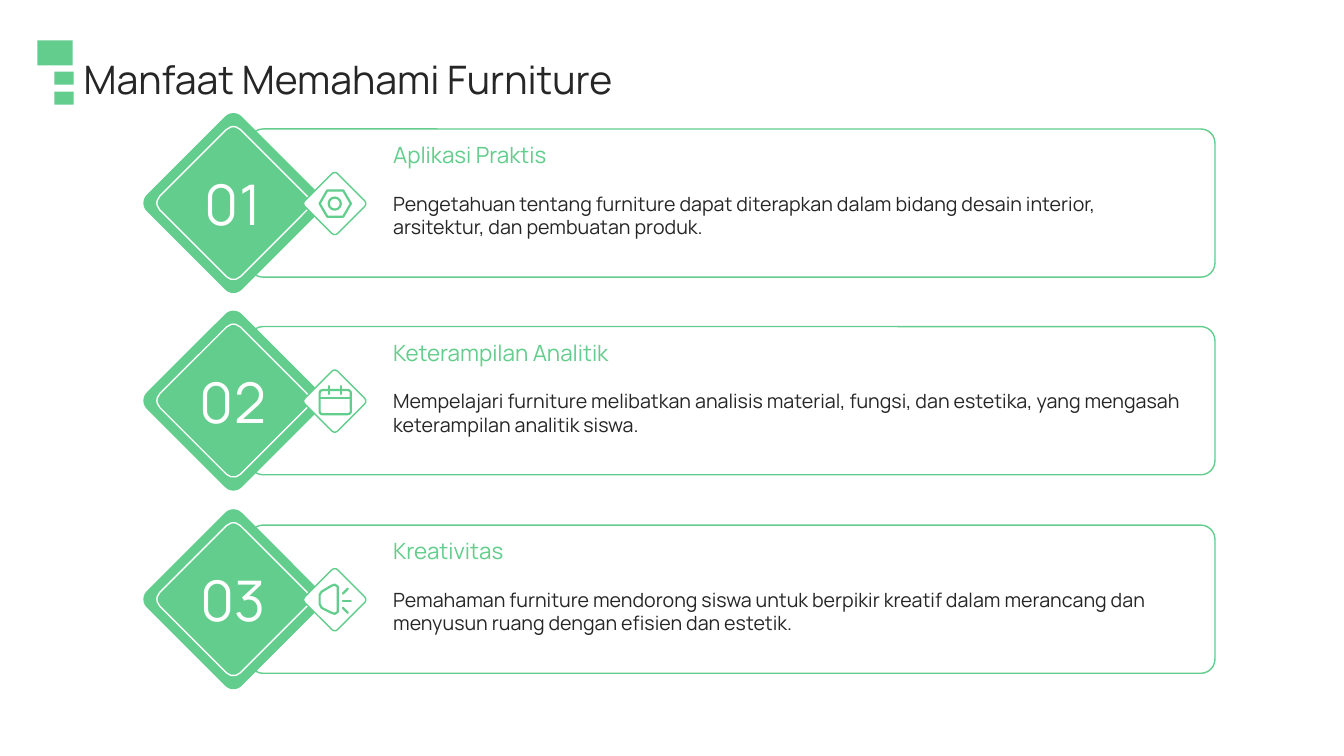
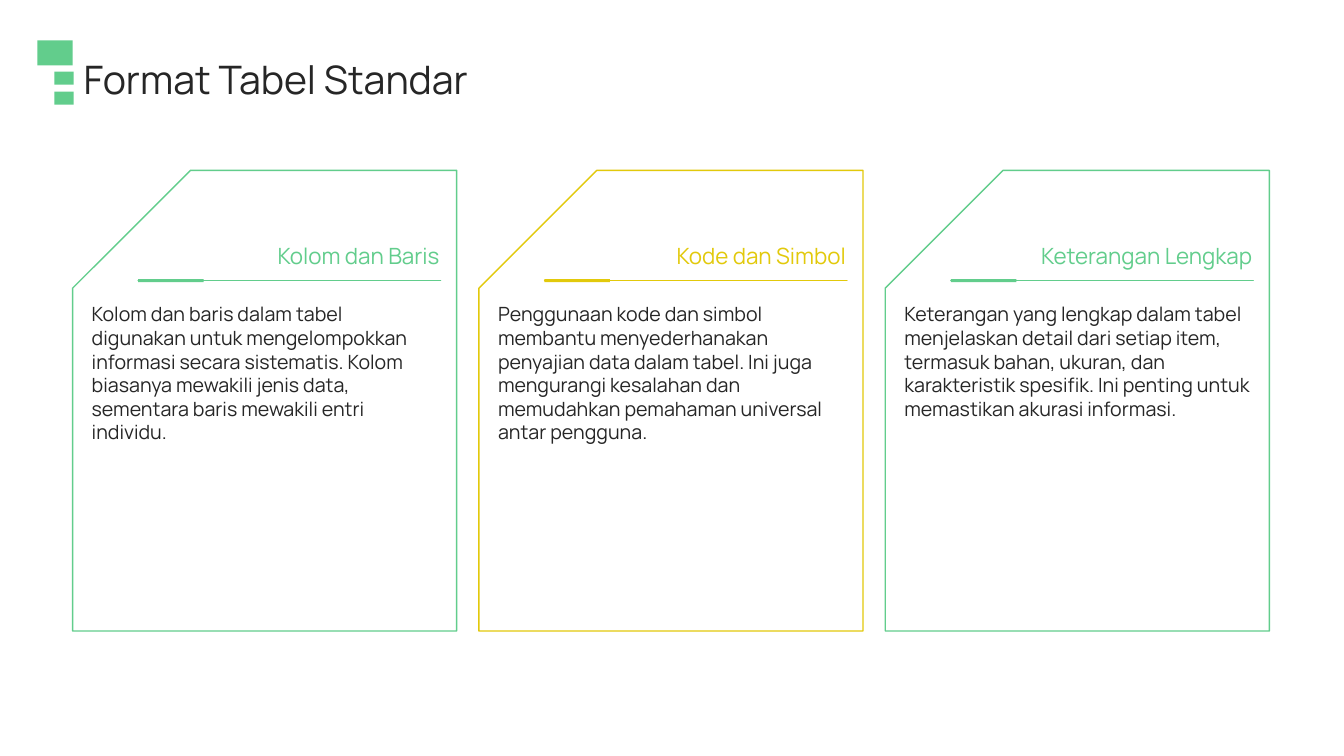
from lxml import etree
from pptx import Presentation
from pptx.dml.color import RGBColor
from pptx.enum.shapes import MSO_CONNECTOR, MSO_SHAPE
from pptx.enum.text import MSO_ANCHOR, PP_ALIGN
from pptx.oxml.ns import qn
from pptx.util import Pt

PX = 9144  # 100 px to the inch
FONT = "Manrope"
GREEN, YELLOW, INK, WHITE = "62CD8C", "E2C90B", "262626", "FFFFFF"
RECT, ROUND, OVAL = MSO_SHAPE.RECTANGLE, MSO_SHAPE.ROUNDED_RECTANGLE, MSO_SHAPE.OVAL
HEXAGON, SNIPPED = MSO_SHAPE.HEXAGON, MSO_SHAPE.SNIP_1_RECTANGLE
STRAIGHT = MSO_CONNECTOR.STRAIGHT
LEFT, CENTER, RIGHT = PP_ALIGN.LEFT, PP_ALIGN.CENTER, PP_ALIGN.RIGHT
TOP, MIDDLE, BOTTOM = MSO_ANCHOR.TOP, MSO_ANCHOR.MIDDLE, MSO_ANCHOR.BOTTOM
ICON_STROKE = 1.6


def color(value):
    return RGBColor.from_string(value)


def paint(shape, fill=None, line=None, width=1):
    shape.shadow.inherit = False
    if fill:
        shape.fill.solid()
        shape.fill.fore_color.rgb = color(fill)
    else:
        shape.fill.background()
    if line:
        shape.line.color.rgb = color(line)
        shape.line.width = Pt(width)
    else:
        shape.line.fill.background()


def add_block(page, kind, box, fill=None, line=None, width=1, adjust=None):
    shape = page.shapes.add_shape(kind, *(value * PX for value in box))
    paint(shape, fill, line, width)
    if adjust is not None:
        shape.adjustments[0] = adjust
    return shape


def add_line(page, start, end, line, width=1):
    connector = page.shapes.add_connector(
        STRAIGHT, *(value * PX for value in (*start, *end)))
    connector.line.color.rgb = color(line)
    connector.line.width = Pt(width)
    properties = connector._element.spPr
    properties.find(qn("a:ln")).set("cap", "rnd")
    etree.SubElement(properties, qn("a:effectLst"))


def add_text(page, box, text, size, ink=INK, align=LEFT, anchor=TOP):
    frame = page.shapes.add_textbox(*(value * PX for value in box)).text_frame
    frame.word_wrap = True
    frame.margin_left = frame.margin_right = 0
    frame.margin_top = frame.margin_bottom = 0
    frame.vertical_anchor = anchor
    para = frame.paragraphs[0]
    para.text = text
    para.alignment = align
    para.font.name = FONT
    para.font.size = Pt(size)
    para.font.color.rgb = color(ink)


def add_page(deck):
    return deck.slides.add_slide(deck.slide_layouts[6])


# Title with its three green blocks
def add_title(page, text):
    add_text(page, (83, 53, 1188, 51), text, 28, anchor=MIDDLE)
    for box in ((37, 40, 35, 25), (54, 71, 19, 13), (54, 91, 19, 13)):
        add_block(page, RECT, box, fill=GREEN)


# Icons, each in a box of 33 by 31 px
def draw_nut(page, left, top):
    add_block(page, HEXAGON, (left + 1, top + 3, 31, 26), line=GREEN,
              width=ICON_STROKE, adjust=0.29)
    add_block(page, OVAL, (left + 10, top + 10, 12, 12), line=GREEN,
              width=ICON_STROKE)


def draw_calendar(page, left, top):
    add_block(page, ROUND, (left + 1, top + 5, 31, 24), line=GREEN,
              width=ICON_STROKE, adjust=0.12)
    strokes = (((1, 13), (32, 13)), ((10, 1), (10, 9)), ((22, 1), (22, 9)))
    draw_strokes(page, left, top, strokes)


def draw_megaphone(page, left, top):
    horn = ((1, 11), (3, 8), (13, 2), (16, 1), (19, 3),
            (19, 28), (16, 30), (13, 29), (3, 24), (1, 20))
    points = [(left + x, top + y) for x, y in horn]
    builder = page.shapes.build_freeform(*points[0], scale=PX)
    builder.add_line_segments(points[1:], close=True)
    paint(builder.convert_to_shape(), line=GREEN, width=ICON_STROKE)
    strokes = (((24, 10), (29, 5)), ((24, 17), (32, 17)), ((24, 24), (29, 29)))
    draw_strokes(page, left, top, strokes)


def draw_strokes(page, left, top, strokes):
    for (x1, y1), (x2, y2) in strokes:
        add_line(page, (left + x1, top + y1), (left + x2, top + y2),
                 GREEN, ICON_STROKE)


# One numbered benefit: frame, diamonds, icon and texts
def add_benefit(page, left, top, number, heading, body, draw_icon):
    add_block(page, ROUND, (left, top, 958, 147), WHITE, GREEN, adjust=0.095)
    add_text(page, (left + 143, top + 62, 783, 65), body, 14)
    diamonds = ((-82, 7, 133, GREEN, None),
                (-72, 17, 113, GREEN, WHITE),
                (62, 51, 46, WHITE, GREEN))
    for x, y, side, fill, line in diamonds:
        diamond = add_block(page, ROUND, (left + x, top + y, side, side),
                            fill, line, adjust=0.086)
        diamond.rotation = 45
    draw_icon(page, left + 69, top + 58)
    add_text(page, (left - 65, top + 34, 98, 79), f"{number:02}", 40, WHITE,
             CENTER, MIDDLE)
    add_text(page, (left + 143, top + 12, 783, 47), heading, 16, GREEN)


# One card with a cut corner, a heading above a rule and a text
def add_card(page, left, top, accent, heading, body):
    card = add_block(page, SNIPPED, (left, top, 381, 457), WHITE, accent,
                     adjust=0.307)
    card._element.spPr.find(qn("a:xfrm")).set("flipH", "1")
    add_text(page, (left + 19, top + 131, 346, 274), body, 14)
    add_text(page, (left + 91, top + 23, 273, 75), heading, 16, accent,
             RIGHT, BOTTOM)
    add_line(page, (left + 65, top + 109), (left + 365, top + 109), accent)
    add_block(page, RECT, (left + 65, top + 108, 65, 3), fill=accent)


BENEFITS = (
    ("Aplikasi Praktis",
     "Pengetahuan tentang furniture dapat diterapkan dalam bidang desain "
     "interior, arsitektur, dan pembuatan produk.", draw_nut),
    ("Keterampilan Analitik",
     "Mempelajari furniture melibatkan analisis material, fungsi, dan "
     "estetika, yang mengasah keterampilan analitik siswa.", draw_calendar),
    ("Kreativitas",
     "Pemahaman furniture mendorong siswa untuk berpikir kreatif dalam "
     "merancang dan menyusun ruang dengan efisien dan estetik.",
     draw_megaphone),
)
CARDS = (
    (GREEN, "Kolom dan Baris",
     "Kolom dan baris dalam tabel digunakan untuk mengelompokkan informasi "
     "secara sistematis. Kolom biasanya mewakili jenis data, sementara baris "
     "mewakili entri individu."),
    (YELLOW, "Kode dan Simbol",
     "Penggunaan kode dan simbol membantu menyederhanakan penyajian data "
     "dalam tabel. Ini juga mengurangi kesalahan dan memudahkan pemahaman "
     "universal antar pengguna."),
    (GREEN, "Keterangan Lengkap",
     "Keterangan yang lengkap dalam tabel menjelaskan detail dari setiap "
     "item, termasuk bahan, ukuran, dan karakteristik spesifik. Ini penting "
     "untuk memastikan akurasi informasi."),
)


def build_benefits(deck):
    page = add_page(deck)
    for index, (heading, body, draw_icon) in enumerate(BENEFITS):
        add_benefit(page, 247, 128 + 393 * index // 2, index + 1,
                    heading, body, draw_icon)
    add_title(page, "Manfaat Memahami Furniture")


def build_cards(deck):
    page = add_page(deck)
    for index, (accent, heading, body) in enumerate(CARDS):
        add_card(page, 72 + 403 * index, 169, accent, heading, body)
    add_title(page, "Format Tabel Standar")


def main():
    deck = Presentation()
    deck.slide_width, deck.slide_height = 1333 * PX, 750 * PX
    build_benefits(deck)
    build_cards(deck)
    deck.save("out.pptx")


if __name__ == "__main__":
    main()
